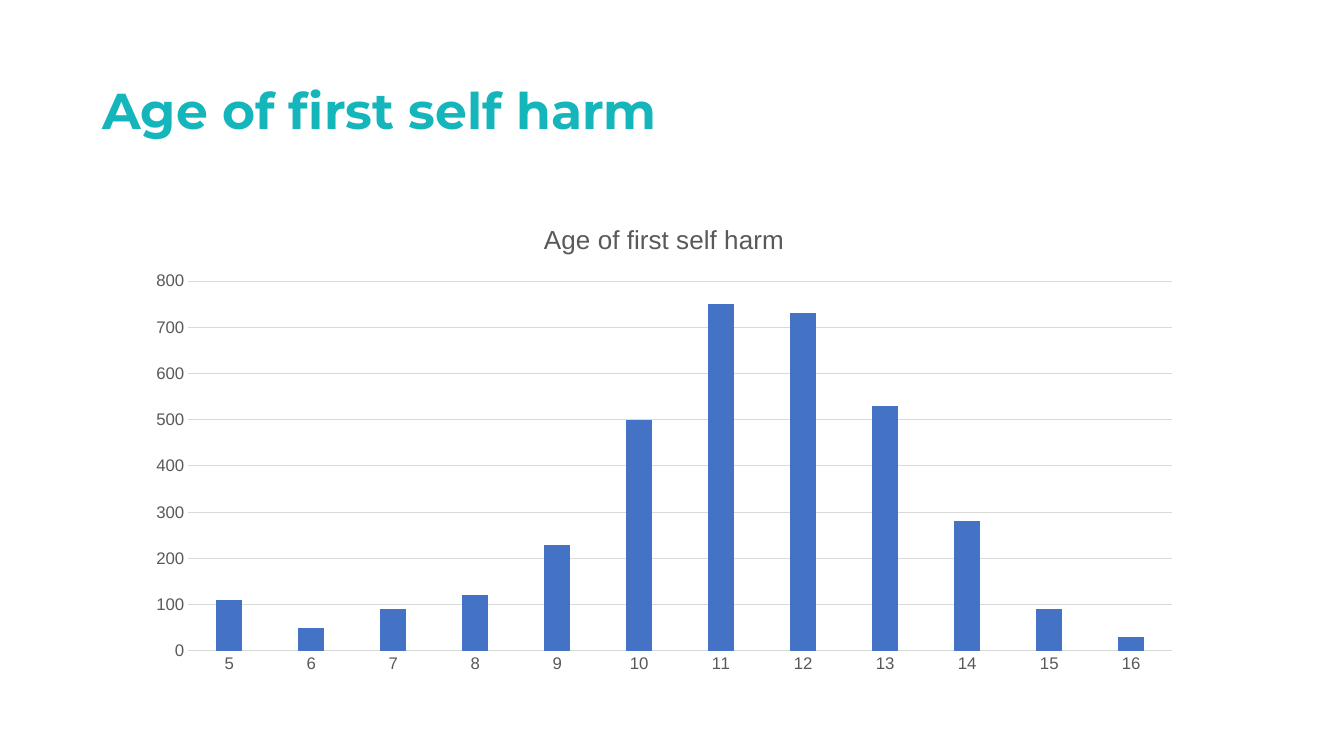
from pptx import Presentation
from pptx.chart.data import CategoryChartData
from pptx.dml.color import RGBColor
from pptx.enum.chart import XL_CHART_TYPE as ChartType, XL_TICK_MARK as TickMark
from pptx.enum.text import MSO_ANCHOR as Anchor, PP_ALIGN as Align
from pptx.util import Pt

TEAL, BLUE, GREY, RULE = "14B5BB", "4472C4", "595959", "D9D9D9"
HEADING = "Age of first self harm"
AGES = range(5, 17)
COUNTS = (110, 50, 90, 120, 230, 500, 750, 730, 530, 280, 90, 30)


def colour(hex_code):
    return RGBColor.from_string(hex_code)


class SlideBuilder:
    """Holds the fonts and the slide being filled."""

    title_font = "Montserrat"
    chart_font = "Arial"

    def __init__(self, slide):
        self.slide = slide

    def style(self, font, name, size, hex_code, bold=False):
        font.name, font.size, font.bold = name, Pt(size), bold
        font.color.rgb = colour(hex_code)

    def rule(self, line):
        line.color.rgb = colour(RULE)
        line.width = Pt(0.75)

    def title(self, text, left, top, width, height):
        heading = self.slide.shapes.title
        heading.left, heading.top = Pt(left), Pt(top)
        heading.width, heading.height = Pt(width), Pt(height)
        frame = heading.text_frame
        frame.text = text
        frame.word_wrap = True
        frame.vertical_anchor = Anchor.MIDDLE
        paragraph = frame.paragraphs[0]
        paragraph.alignment = Align.LEFT
        paragraph.line_spacing = 0.9
        self.style(paragraph.runs[0].font, self.title_font, 36, TEAL, bold=True)

    def column_chart(self, text, categories, values, left, top, width, height):
        data = CategoryChartData()
        data.categories = [str(category) for category in categories]
        data.add_series("Series 1", values)
        chart = self.slide.shapes.add_chart(
            ChartType.COLUMN_CLUSTERED, Pt(left), Pt(top), Pt(width), Pt(height), data
        ).chart
        self.style(chart.font, self.chart_font, 10, "000000")
        chart.has_legend = False
        chart.has_title = True
        caption = chart.chart_title
        caption.include_in_layout = False
        caption.text_frame.text = text
        self.style(caption.text_frame.paragraphs[0].runs[0].font,
                   self.chart_font, 18.6, GREY)

        for axis in (chart.category_axis, chart.value_axis):
            axis.major_tick_mark = axis.minor_tick_mark = TickMark.NONE
            self.style(axis.tick_labels.font, self.chart_font, 12, GREY)
        self.rule(chart.category_axis.format.line)

        counts = chart.value_axis
        counts.minimum_scale, counts.maximum_scale, counts.major_unit = 0, 800, 100
        counts.format.line.fill.background()
        self.rule(counts.major_gridlines.format.line)

        columns = chart.plots[0]
        columns.vary_by_categories = False
        columns.gap_width, columns.overlap = 219, -27
        fill = columns.series[0].format.fill
        fill.solid()
        fill.fore_color.rgb = colour(BLUE)


def main():
    deck = Presentation()
    deck.slide_width, deck.slide_height = Pt(960), Pt(540)
    title_only = deck.slide_layouts[5]
    builder = SlideBuilder(deck.slides.add_slide(title_only))
    builder.title(HEADING, 66, 28.75, 710.6, 104.4)
    builder.column_chart(HEADING, AGES, COUNTS, 96.5, 144.7, 756, 342.7)
    deck.save("out.pptx")


if __name__ == "__main__":
    main()
